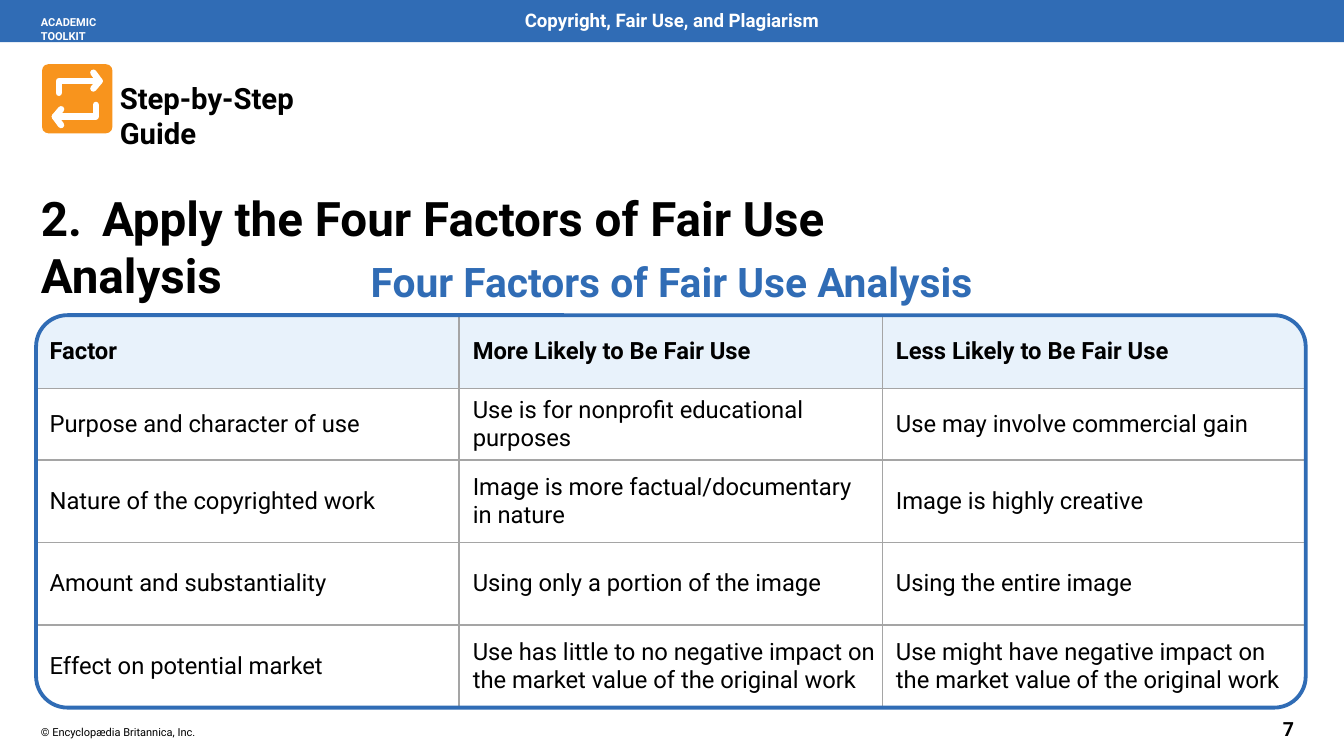
from lxml.etree import SubElement
from pptx import Presentation
from pptx.dml.color import RGBColor
from pptx.enum.shapes import MSO_SHAPE as SHAPE
from pptx.enum.text import MSO_ANCHOR as ANCHOR, PP_ALIGN as ALIGN
from pptx.oxml import parse_xml
from pptx.oxml.ns import nsdecls, qn
from pptx.util import Cm, Pt

BLUE = RGBColor(0x30, 0x6C, 0xB5)
PALE = RGBColor(0xE8, 0xF2, 0xFB)
GREY = RGBColor(0xA5, 0xA5, 0xA5)
ORANGE = RGBColor(0xF8, 0x94, 0x1D)
WHITE = RGBColor(0xFF, 0xFF, 0xFF)
BLACK = RGBColor(0, 0, 0)

WIDTH, HEIGHT = 55.85, 31.42
TABLE_X, TABLE_Y, TABLE_W = 1.5, 13.1, 52.76
ROW_HEIGHTS = [3.05, 2.97, 3.43, 3.43, 3.43]
FACTORS = [
    ["Factor", "More Likely to Be Fair Use", "Less Likely to Be Fair Use"],
    ["Purpose and character of use",
     "Use is for nonprofit educational purposes",
     "Use may involve commercial gain"],
    ["Nature of the copyrighted work",
     "Image is more factual/documentary \vin nature",
     "Image is highly creative"],
    ["Amount and substantiality",
     "Using only a portion of the image",
     "Using the entire image"],
    ["Effect on potential market",
     "Use has little to no negative impact on the market value of the original work",
     "Use might have negative impact on the market value of the original work"],
]


class Deck:
    """Holds the text style and the current slide."""

    font = {"name": "Roboto", "bold": True}
    frame = {"word_wrap": True, "margin_left": 0, "margin_right": 0,
             "margin_top": Cm(0.05), "margin_bottom": 0}
    cell = {"vertical_anchor": ANCHOR.MIDDLE, "margin_left": Cm(0.56),
            "margin_right": Cm(0.25)}

    def __init__(self, slide):
        self.s = slide

    def fill_text(self, tf, text, size, color, **font):
        p = tf.paragraphs[0]
        p.text = text
        for r in p.runs:
            for key, value in {**self.font, "size": Pt(size), **font}.items():
                setattr(r.font, key, value)
            r.font.color.rgb = color
        return p

    def text(self, x, y, w, h, text, size, color=BLACK, align=ALIGN.LEFT, **font):
        tf = self.s.shapes.add_textbox(Cm(x), Cm(y), Cm(w), Cm(h)).text_frame
        for key, value in self.frame.items():
            setattr(tf, key, value)
        self.fill_text(tf, text, size, color, **font).alignment = align

    def paint(self, sp, fill=None, line=None, weight=1):
        sp.shadow.inherit = False
        if fill is None:
            sp.fill.background()
        else:
            sp.fill.solid()
            sp.fill.fore_color.rgb = fill
        if line is None:
            sp.line.fill.background()
        else:
            sp.line.color.rgb = line
            sp.line.width = Pt(weight)

    def shape(self, kind, x, y, w, h, adjust=(), **look):
        sp = self.s.shapes.add_shape(kind, Cm(x), Cm(y), Cm(w), Cm(h))
        for i, value in enumerate(adjust):
            sp.adjustments[i] = value
        self.paint(sp, **look)

    def stroke(self, points, color, weight):
        start, *rest = [(Cm(x), Cm(y)) for x, y in points]
        fb = self.s.shapes.build_freeform(*start)
        fb.add_line_segments(rest, close=False)
        sp = fb.convert_to_shape()
        self.paint(sp, line=color, weight=weight)
        ln = sp.element.spPr.find(qn("a:ln"))
        ln.set("cap", "rnd")
        SubElement(ln, qn("a:round"))

    def borders(self, cell, inner):
        tc_pr = cell._tc.get_or_add_tcPr()
        for i, (side, shown) in enumerate(inner.items()):
            fill = (f'<a:solidFill><a:srgbClr val="{GREY}"/></a:solidFill>'
                    if shown else "<a:noFill/>")
            tc_pr.insert(i, parse_xml(
                f'<a:ln{side} {nsdecls("a")} w="{Pt(2.25)}">{fill}</a:ln{side}>'))

    def table(self, x, y, w, heights, rows, size):
        n_rows, n_cols = len(rows), len(rows[0])
        tbl = self.s.shapes.add_table(n_rows, n_cols, Cm(x), Cm(y), Cm(w),
                                      Cm(sum(heights))).table
        tbl.first_row = tbl.horz_banding = False
        for col in tbl.columns:
            col.width = Cm(w / n_cols)
        for i, (height, row) in enumerate(zip(heights, rows)):
            tbl.rows[i].height = Cm(height)
            for j, text in enumerate(row):
                cell = tbl.cell(i, j)
                for key, value in self.cell.items():
                    setattr(cell, key, value)
                cell.fill.background()
                self.fill_text(cell.text_frame, text, size, BLACK, bold=i == 0)
                self.borders(cell, {"L": j > 0, "R": j < n_cols - 1,
                                    "T": i > 0, "B": i < n_rows - 1})


def main():
    prs = Presentation()
    prs.slide_width, prs.slide_height = Cm(WIDTH), Cm(HEIGHT)
    deck = Deck(prs.slides.add_slide(prs.slide_layouts[6]))

    # Top bar
    deck.shape(SHAPE.RECTANGLE, 0, 0, WIDTH, 1.75, fill=BLUE)
    deck.text(19.66, 0.33, 16.51, 0.99, "Copyright, Fair Use, and Plagiarism",
              22, WHITE, ALIGN.CENTER)
    deck.text(1.7, 0.61, 4.14, 0.63, "ACADEMIC TOOLKIT", 13, WHITE)

    # Guide icon: one arrow, and the same arrow turned half round
    deck.shape(SHAPE.ROUNDED_RECTANGLE, 1.75, 2.67, 2.92, 2.87, [0.09], fill=ORANGE)
    shaft = [(-0.77, -0.25), (-0.77, -0.74), (0.93, -0.74)]
    head = [(0.67, -1.09), (0.93, -0.74), (0.67, -0.43)]
    for turn in (1, -1):
        for part in (shaft, head):
            deck.stroke([(3.21 + turn * x, 4.11 + turn * y) for x, y in part],
                        WHITE, 7.5)
    deck.text(4.98, 3.3, 10.5, 1.55, "Step-by-Step Guide", 34.5)

    # Headings
    deck.text(1.7, 7.82, 40.39, 2.44,
              "2.\tApply the Four Factors of Fair Use Analysis", 56)
    deck.text(5.59, 10.62, 44.65, 2.08, "Four Factors of Fair Use Analysis",
              48, BLUE, ALIGN.CENTER)

    # Factor table in its rounded frame
    deck.shape(SHAPE.ROUND_2_SAME_RECTANGLE, TABLE_X, TABLE_Y, TABLE_W,
               ROW_HEIGHTS[0], [0.37, 0], fill=PALE)
    deck.table(TABLE_X, TABLE_Y, TABLE_W, ROW_HEIGHTS, FACTORS, 28)
    deck.shape(SHAPE.ROUNDED_RECTANGLE, TABLE_X, TABLE_Y, TABLE_W,
               sum(ROW_HEIGHTS), [0.08], line=BLUE, weight=4.5)

    # Footer
    deck.text(1.7, 30.12, 6.53, 0.63, "© Encyclopædia Britannica, Inc.", 13,
              bold=False)
    deck.text(53.31, 29.77, 0.94, 1.04, "7", 23)

    prs.save("out.pptx")


if __name__ == "__main__":
    main()
